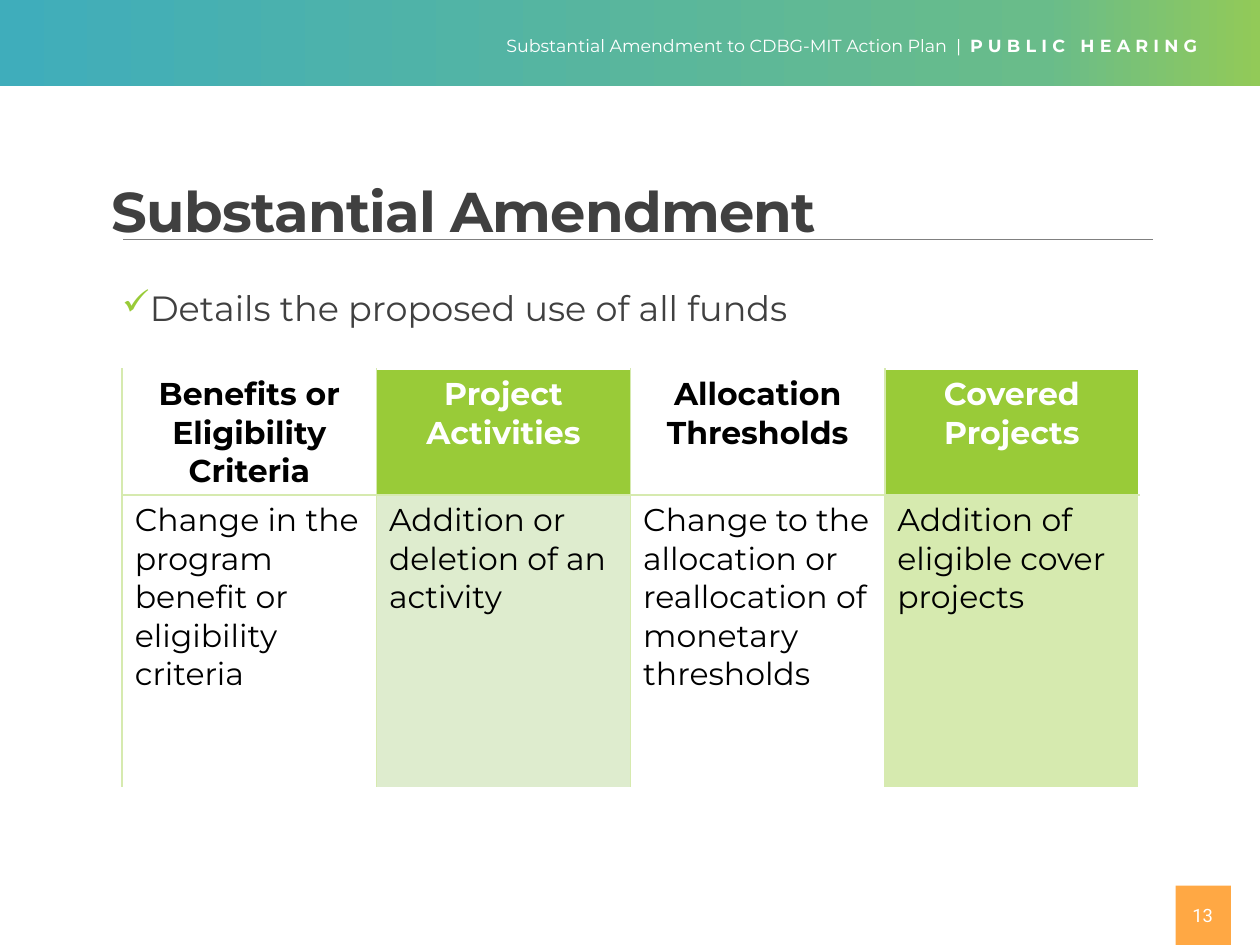
from dataclasses import dataclass

from lxml import etree
from pptx import Presentation
from pptx import util as u
from pptx.dml.color import RGBColor
from pptx.enum import shapes, text
from pptx.oxml import ns

Inches, Pt = u.Inches, u.Pt
MID, CENTER = text.MSO_ANCHOR.MIDDLE, text.PP_ALIGN.CENTER


@dataclass(frozen=True)
class Theme:
    font: str = "Montserrat"
    num_font: str = "Roboto"
    white: str = "FFFFFF"
    black: str = "000000"
    ink: str = "404040"
    rule: str = "808080"
    green: str = "99CB38"
    pale: str = "D6EAAF"
    mint: str = "DEECCE"
    orange: str = "FFA844"
    band: tuple = ((0, "3FADBB"), (83, "69BC8A"), (100, "92CA58"))
    head: float = 10
    title: float = 32
    body: float = 20
    cell: float = 18
    num: float = 10.5


T = Theme()


def rgb(code):
    return RGBColor.from_string(code)


def put(obj, **vals):
    for name, val in vals.items():
        setattr(obj, name, val)


def node(up, tag, **vals):
    el = etree.SubElement(up, ns.qn(tag))
    for name, val in vals.items():
        el.set(name, str(val))
    return el


def style(run, size, color, bold=False, font=T.font, gap=0):
    put(run.font, size=Pt(size), bold=bold, name=font)
    run.font.color.rgb = rgb(color)
    if gap:
        run.font._element.set("spc", str(int(gap * 100)))


def write(para, words, size, color, **look):
    run = para.add_run()
    run.text = words
    style(run, size, color, **look)


def frame(slide, box, **vals):
    tf = slide.shapes.add_textbox(*map(Inches, box)).text_frame
    put(tf, word_wrap=True, **vals)
    return tf.paragraphs[0]


def block(slide, box):
    rect = slide.shapes.add_shape(
        shapes.MSO_SHAPE.RECTANGLE, *map(Inches, box))
    rect.shadow.inherit = False
    rect.line.fill.background()
    return rect


# Gradient band with the running header
def banner(slide, box):
    x, y, w, h = box
    rect = block(slide, box)
    rect.fill.gradient()
    rect.fill.gradient_angle = 0
    stops = rect._element.spPr.find(".//" + ns.qn("a:gsLst"))
    for old in list(stops):
        stops.remove(old)
    for pos, color in T.band:
        stop = node(stops, "a:gs", pos=pos * 1000)
        node(stop, "a:srgbClr", val=color)
    para = frame(slide, (x + 3.92, y + 0.23, w - 4.01, 0.27))
    write(para, "Substantial Amendment to CDBG-MIT Action Plan  |  ",
          T.head, T.white)
    write(para, "PUBLIC HEARING", T.head, T.white, bold=True, gap=3)


# Title over a thin rule
def title(slide, box):
    x, y, w, h = box
    ends = (x + 0.19, y + 0.47, x + 8.36, y + 0.47)
    line = slide.shapes.add_connector(
        shapes.MSO_CONNECTOR.STRAIGHT, *map(Inches, ends))
    line.line.color.rgb = rgb(T.rule)
    line.line.width = Pt(0.5)
    node(line._element.spPr, "a:effectLst")
    para = frame(slide, box, vertical_anchor=MID)
    para.line_spacing = 0.85
    write(para, "Substantial Amendment", T.title, T.ink, bold=True, gap=-0.5)


# Checked statement
def point(slide, box):
    para = frame(slide, box, margin_left=0, margin_right=0)
    put(para, line_spacing=0.9, space_after=Pt(2))
    props = para._element.get_or_add_pPr()
    props.set("marL", str(Inches(0.1)))
    props.set("indent", str(Inches(-0.1)))
    node(node(props, "a:buClr"), "a:srgbClr", val=T.green)
    node(props, "a:buChar", char="✓")
    write(para, "Details the proposed use of all funds", T.body, T.ink)


def border(cell, **sides):
    props = cell._tc.get_or_add_tcPr()
    for i, side in enumerate("LRTB"):
        line = node(props, "a:ln" + side, w=Pt(1))
        node(node(line, "a:solidFill"), "a:srgbClr", val=sides[side])
        props.insert(i, line)


# Table of amendment triggers: heading, detail, heading fill, detail fill
TOPICS = (
    ("Benefits or Eligibility Criteria",
     "Change in the program benefit or eligibility criteria",
     T.white, T.white),
    ("Project Activities", "Addition or deletion of an activity",
     T.green, T.mint),
    ("Allocation Thresholds",
     "Change to the allocation or reallocation of monetary thresholds",
     T.white, T.white),
    ("Covered Projects", "Addition of eligible cover projects",
     T.green, T.pale),
)


def grid(slide, box):
    count = len(TOPICS)
    table = slide.shapes.add_table(2, count, *map(Inches, box)).table
    put(table, first_row=False, horz_banding=False)
    for row, high in zip(table.rows, (0.93, 2.32)):
        row.height = Inches(high)
    for c, (head, note, top, low) in enumerate(TOPICS):
        table.columns[c].width = Inches(box[2] / count)
        edge = T.white if c == count - 1 else T.pale
        for r, (words, fill) in enumerate(((head, top), (note, low))):
            cell = table.cell(r, c)
            cell.fill.solid()
            cell.fill.fore_color.rgb = rgb(fill)
            para = cell.text_frame.paragraphs[0]
            if r == 0:
                para.alignment = CENTER
            color = T.white if fill == T.green else T.black
            write(para, words, T.cell, color, bold=r == 0)
            border(cell, L=T.pale, R=edge,
                   T=T.pale if r else T.white,
                   B=T.white if r else T.pale)


# Page number on its square
def number(slide, box):
    x, y, w, h = box
    rect = block(slide, box)
    rect.fill.solid()
    rect.fill.fore_color.rgb = rgb(T.orange)
    para = frame(slide, (x, y + 0.03, w - 0.01, 0.4), vertical_anchor=MID)
    para.alignment = CENTER
    write(para, "13", T.num, T.white, font=T.num_font)


def main():
    deck = Presentation()
    put(deck, slide_width=Inches(10), slide_height=Inches(7.5))
    slide = deck.slides.add_slide(deck.slide_layouts[6])
    number(slide, (9.33, 7.03, 0.44, 0.47))
    banner(slide, (0, 0, 10, 0.68))
    title(slide, (0.79, 1.43, 8.25, 0.56))
    grid(slide, (0.97, 2.93, 8.07, 3.25))
    point(slide, (0.97, 2.26, 8.25, 0.4))
    deck.save("out.pptx")


if __name__ == "__main__":
    main()
